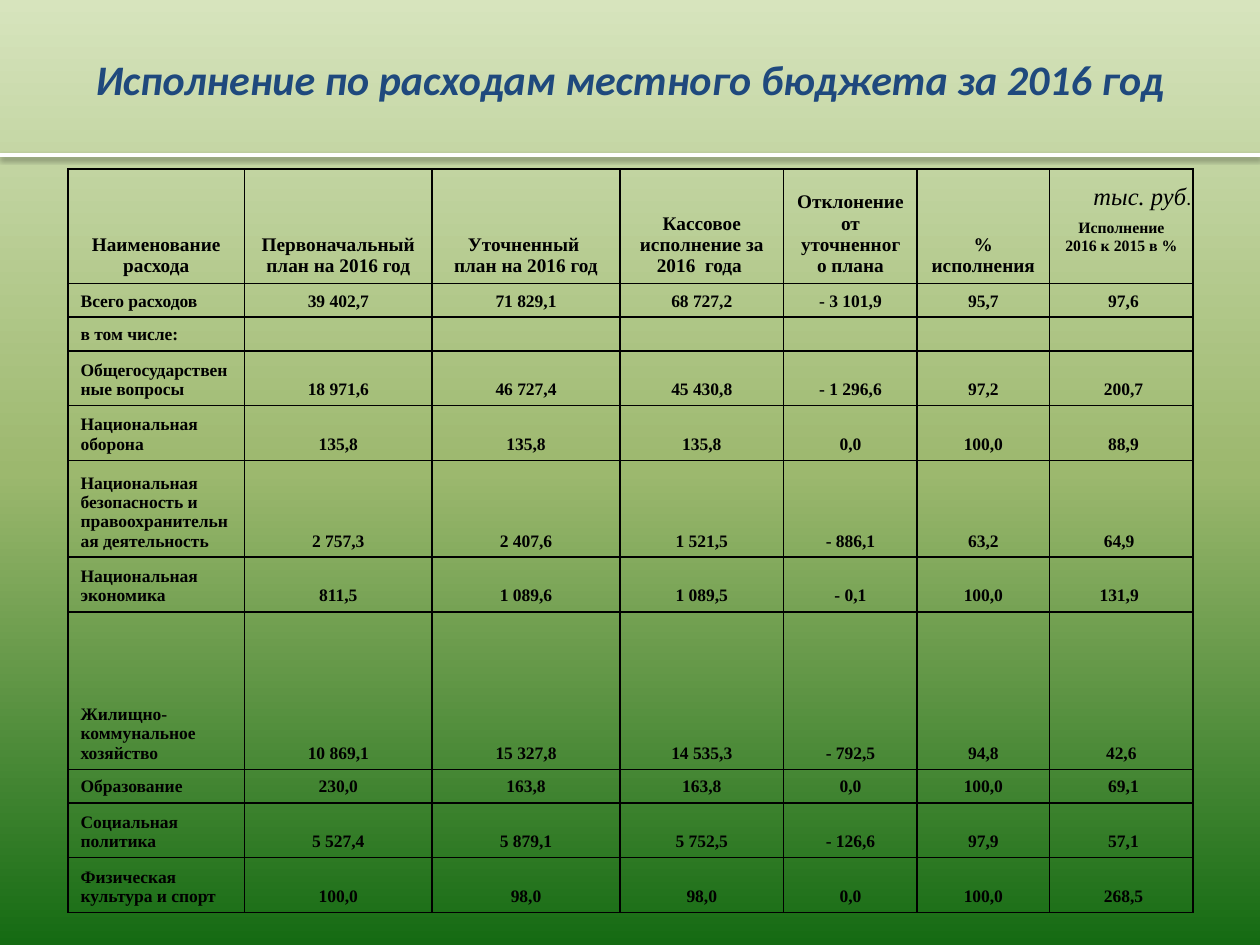
from lxml.etree import SubElement
from pptx import Presentation
from pptx.dml.color import RGBColor
from pptx.enum.shapes import MSO_CONNECTOR
from pptx.enum.text import MSO_ANCHOR, PP_ALIGN
from pptx.oxml import parse_xml
from pptx.oxml.ns import nsdecls, qn
from pptx.util import Inches, Pt

COLORS = {
    "top": "D7E4BD", "middle": "9CB86E", "bottom": "156B13",
    "rule": "FFFFFF", "ink": "000000", "title": "1F497D",
}
SERIF, SANS = "Times New Roman", "Calibri"
GRID_COLUMNS, GRID_ROWS = 100, 75
COLUMN_WIDTHS = [14, 14.9, 14.9, 13, 10.6, 10.5, 11.4]
ROW_HEIGHTS = [9.1, 2.5, 2.5, 4.1, 4.1, 7.1, 4.1, 12.5, 2.5, 4.1, 4.1]
HEADERS = [
    "Наименование расхода", "Первоначальный план на 2016 год",
    "Уточненный  план на 2016 год", "Кассовое исполнение за 2016  года ",
    "Отклонение от уточненного плана", "% исполнения",
    "Исполнение 2016 к 2015 в %",
]
EXPENSES = [
    ["Всего расходов", "39 402,7", "71 829,1", "68 727,2", "- 3 101,9", "95,7", " 97,6"],
    ["в том числе:", "", "", "", "", "", ""],
    ["Общегосударственные вопросы", "18 971,6", "46 727,4", "45 430,8", "- 1 296,6", "97,2", " 200,7"],
    ["Национальная оборона", "135,8", "135,8", "135,8", "0,0", "100,0", " 88,9"],
    ["Национальная безопасность и правоохранительная деятельность",
     "2 757,3", "2 407,6", "1 521,5", "- 886,1", "63,2", "64,9 "],
    ["Национальная экономика", "811,5", "1 089,6", "1 089,5", "- 0,1", "100,0", "131,9 "],
    ["Жилищно-коммунальное хозяйство", "10 869,1", "15 327,8", "14 535,3", "- 792,5", "94,8", "42,6"],
    ["Образование", "230,0", "163,8", "163,8", "0,0", "100,0", " 69,1"],
    ["Социальная политика", "5 527,4", "5 879,1", "5 752,5", "- 126,6", "97,9", " 57,1"],
    ["Физическая культура и спорт", "100,0", "98,0", "98,0", "0,0", "100,0", " 268,5"],
]


class BudgetSlide:
    """Holds the grid, the style and the current slide."""

    def __init__(self, deck):
        self.column = deck.slide_width / GRID_COLUMNS
        self.row = deck.slide_height / GRID_ROWS
        self.slide = deck.slides.add_slide(deck.slide_layouts[5])

    def box(self, left, top, width, height):
        return (round(left * self.column), round(top * self.row),
                round(width * self.column), round(height * self.row))

    def run(self, paragraph, text, size, font=SERIF, color="ink", bold=False, italic=False):
        run = paragraph.add_run()
        run.text = text
        run.font.size, run.font.name = Pt(size), font
        run.font.bold, run.font.italic = bold, italic
        run.font.color.rgb = RGBColor.from_string(COLORS[color])

    def background(self, *names):
        fill = self.slide.background.fill
        fill.gradient()
        fill.gradient_angle = 270
        stops = next(self.slide.element.iter(qn("a:gsLst")))
        for stop in list(stops):
            stops.remove(stop)
        for index, name in enumerate(names):
            position = 100000 * index // (len(names) - 1)
            stop = SubElement(stops, qn("a:gs"), pos=str(position))
            SubElement(stop, qn("a:srgbClr"), val=COLORS[name])

    def title(self, text, *place):
        title = self.slide.shapes.title
        title.left, title.top, title.width, title.height = self.box(*place)
        frame = title.text_frame
        frame.vertical_anchor = MSO_ANCHOR.MIDDLE
        frame.margin_bottom = Inches(0.65)
        frame.paragraphs[0].alignment = PP_ALIGN.CENTER
        self.run(frame.paragraphs[0], text, 24, SANS, "title", bold=True, italic=True)

    def rule(self, top):
        left, y, right, _ = self.box(0, top, GRID_COLUMNS, 0)
        rule = self.slide.shapes.add_connector(MSO_CONNECTOR.STRAIGHT, right, y, left, y)
        rule.line.color.rgb = RGBColor.from_string(COLORS["rule"])
        rule.line.width = Pt(2)
        rule.element.spPr.append(parse_xml(
            f'<a:effectLst {nsdecls("a")}><a:outerShdw blurRad="{Pt(3.1)}" dist="{Pt(1.6)}" '
            f'dir="5400000" rotWithShape="0"><a:srgbClr val="{COLORS["ink"]}">'
            '<a:alpha val="38000"/></a:srgbClr></a:outerShdw></a:effectLst>'))

    def unit_note(self, *place):
        frame = self.slide.shapes.add_textbox(*self.box(*place)).text_frame
        frame.word_wrap = True
        self.run(frame.paragraphs[0], "тыс. руб", 14, italic=True)
        self.run(frame.paragraphs[0], ".", 11, SANS)

    def table(self, left, top, rows):
        place = self.box(left, top, sum(COLUMN_WIDTHS), sum(ROW_HEIGHTS))
        holder = self.slide.shapes.add_table(len(rows), len(COLUMN_WIDTHS), *place)
        table = holder.table
        table.first_row = table.horz_banding = False
        for column, width in zip(table.columns, COLUMN_WIDTHS):
            column.width = round(width * self.column)
        for line, height in zip(table.rows, ROW_HEIGHTS):
            line.height = round(height * self.row)
        for r, texts in enumerate(rows):
            for c, text in enumerate(texts):
                cell = table.cell(r, c)
                cell.vertical_anchor = MSO_ANCHOR.BOTTOM
                paragraph = cell.text_frame.paragraphs[0]
                if r == 0 or c > 0:
                    paragraph.alignment = PP_ALIGN.CENTER
                size = 10 if r else 9 if c == len(texts) - 1 else 11
                if text:
                    self.run(paragraph, text, size, bold=True)
        table.cell(0, len(HEADERS) - 1).margin_bottom = Inches(0.23)
        self.borders(holder)
        for cell in table.iter_cells():
            cell.fill.background()

    def borders(self, holder):
        for properties in holder.element.iter(qn("a:tcPr")):
            for side in ("lnL", "lnR", "lnT", "lnB"):
                edge = SubElement(properties, qn(f"a:{side}"), w=str(Pt(1)))
                fill = SubElement(edge, qn("a:solidFill"))
                SubElement(fill, qn("a:srgbClr"), val=COLORS["ink"])
        for paragraph in holder.element.iter(qn("a:p")):
            if paragraph.find(qn("a:r")) is None:
                SubElement(paragraph, qn("a:endParaRPr"), sz="1000")


def main():
    deck = Presentation()
    deck.slide_width, deck.slide_height = Inches(10), Inches(7.5)
    budget = BudgetSlide(deck)
    budget.background("top", "middle", "bottom")
    budget.rule(12.3)
    budget.unit_note(85.8, 13.9, 14.2, 3.9)
    budget.table(5.4, 13.4, [HEADERS, *EXPENSES])
    budget.title("Исполнение по расходам местного бюджета за 2016 год", 5, 3, 90, 12.5)
    deck.save("out.pptx")


if __name__ == "__main__":
    main()
